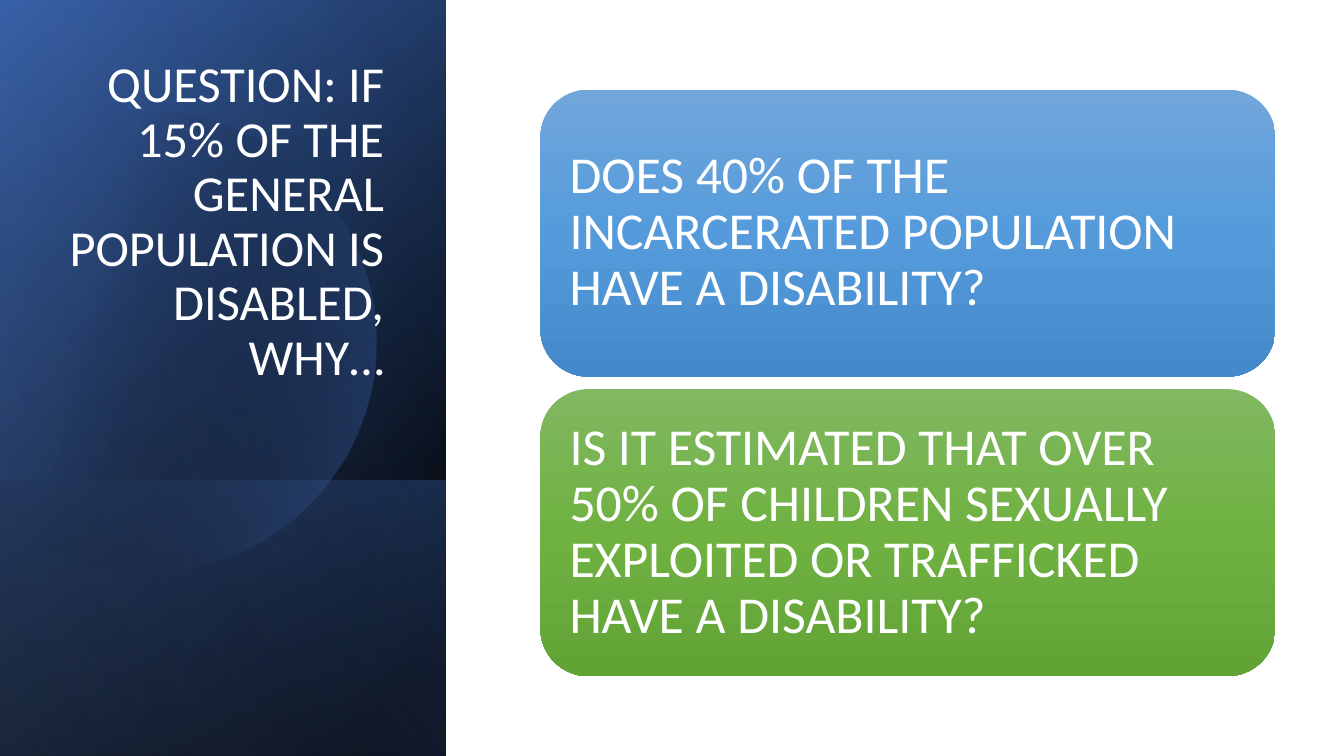
from math import acos, cos, sin

from pptx import Presentation
from pptx.dml.color import RGBColor
from pptx.enum.shapes import MSO_SHAPE
from pptx.enum.text import MSO_ANCHOR, PP_ALIGN
from pptx.oxml import parse_xml
from pptx.oxml.ns import nsdecls
from pptx.util import Pt

WHITE = RGBColor(0xFF, 0xFF, 0xFF)
BLACK = RGBColor(0x00, 0x00, 0x00)
NAVY = RGBColor(0x2F, 0x55, 0x97)
BLUE = RGBColor(0x44, 0x72, 0xC4)
PALE_BLUE = RGBColor(0x8F, 0xAA, 0xDC)
SKY = [RGBColor(0x71, 0xA6, 0xDB), RGBColor(0x55, 0x9B, 0xDB), RGBColor(0x44, 0x8A, 0xCA)]
GREEN = [RGBColor(0x81, 0xB8, 0x61), RGBColor(0x6F, 0xB2, 0x42), RGBColor(0x62, 0xA3, 0x36)]


def paint(sp, stops, angle):
    """Fill with a linear gradient of (position %, colour, opacity %) stops; no line or shadow."""
    sp.shadow.inherit = False
    sp.line.fill.background()
    sp.fill.background()
    gs = "".join(
        f'<a:gs pos="{pos * 1000}"><a:srgbClr val="{color}">'
        f'<a:alpha val="{opacity * 1000}"/></a:srgbClr></a:gs>'
        for pos, color, opacity in stops)
    gradient = parse_xml(
        f'<a:gradFill {nsdecls("a")} rotWithShape="1"><a:gsLst>{gs}</a:gsLst>'
        f'<a:lin ang="{angle * 60000}" scaled="0"/></a:gradFill>')
    spPr = sp._element.spPr
    spPr.replace(spPr.find("{*}noFill"), gradient)


def write(sp, text, size, align, anchor, inset):
    tf = sp.text_frame
    tf.word_wrap = True
    tf.vertical_anchor = anchor
    tf.margin_left = tf.margin_right = Pt(inset)
    tf.margin_top = tf.margin_bottom = Pt(inset)
    p = tf.paragraphs[0]
    p.text = text
    p.alignment = align
    p.line_spacing = 0.9
    font = p.runs[0].font
    font.name, font.size, font.color.rgb = "Calibri", Pt(size), WHITE


prs = Presentation()
prs.slide_width, prs.slide_height = Pt(960), Pt(540)
s = prs.slides.add_slide(prs.slide_layouts[6])

# Side panel: sheets turned a quarter, with a disc below the last one
PANEL_W = 318.5
sheets = [
    (0, 540, [(8, BLACK, 100), (100, NAVY, 100)], 50),
    (0, 540, [(0, BLACK, 0), (99, BLUE, 46)], 30),
    (343, 197, [(2, BLUE, 29), (100, BLACK, 30)], 130),
    (0, 540, [(0, BLACK, 0), (99, PALE_BLUE, 11)], 120),
]
for i, (top, height, stops, angle) in enumerate(sheets):
    if i == 3:
        cx, cy, radius, steps = 104, 244, 165, 120
        reach = acos(-cx / radius)
        angles = [reach * (2 * n / steps - 1) for n in range(steps + 1)]
        rim = [(Pt(cx + radius * cos(a)), Pt(cy + radius * sin(a))) for a in angles]
        builder = s.shapes.build_freeform(*rim[0])
        builder.add_line_segments(rim[1:], close=True)
        disc = builder.convert_to_shape()
        paint(disc, [(29, BLACK, 0), (100, BLUE, 43)], 14)
    sheet = s.shapes.add_shape(
        MSO_SHAPE.RECTANGLE, Pt((PANEL_W - height) / 2), Pt(top + (height - PANEL_W) / 2),
        Pt(height), Pt(PANEL_W))
    sheet.rotation = 90
    sheet._element.spPr.xfrm.set("flipH", "1")
    paint(sheet, stops, angle)

title = s.shapes.add_textbox(Pt(36), Pt(42), Pt(245.5), Pt(241))
write(title, "QUESTION: IF 15% OF THE GENERAL POPULATION IS DISABLED, WHY…",
      36, PP_ALIGN.RIGHT, MSO_ANCHOR.BOTTOM, 7.2)

questions = [
    ("DOES 40% OF THE INCARCERATED POPULATION HAVE A DISABILITY?", SKY),
    ("IS IT ESTIMATED THAT OVER 50% OF CHILDREN SEXUALLY EXPLOITED OR TRAFFICKED "
     "HAVE A DISABILITY?", GREEN),
]
for i, (question, colors) in enumerate(questions):
    card = s.shapes.add_shape(
        MSO_SHAPE.ROUNDED_RECTANGLE, Pt(386), Pt(64 + 214 * i), Pt(525), Pt(205))
    paint(card, [(50 * n, color, 100) for n, color in enumerate(colors)], 90)
    write(card, question, 37, PP_ALIGN.LEFT, MSO_ANCHOR.MIDDLE, 10.8)

prs.save("out.pptx")
